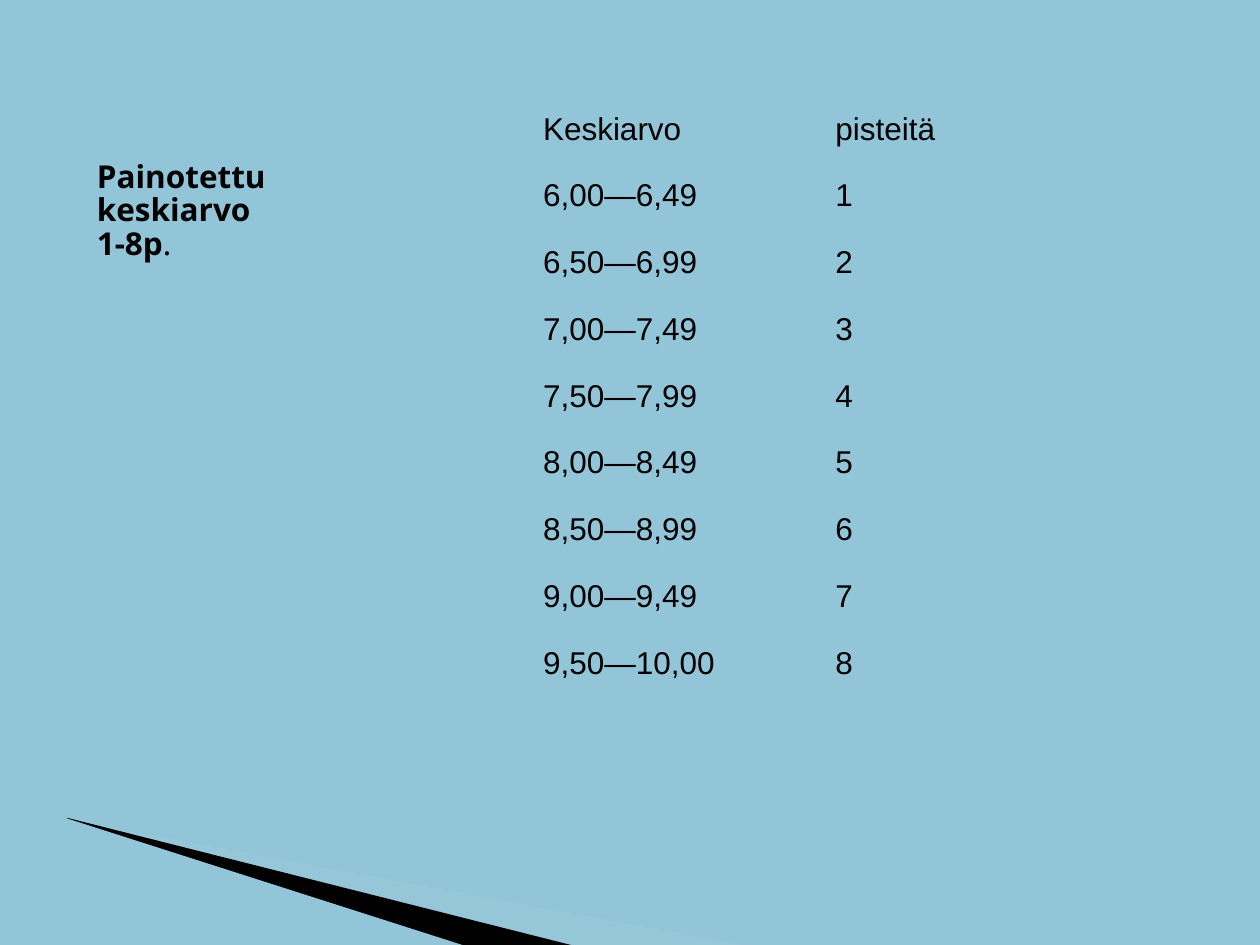
import pptx
import pptx.util
import pptx.dml.color
import pptx.enum.shapes
import pptx.enum.text
import pptx.oxml.ns
from lxml import etree

Inches = pptx.util.Inches
Pt = pptx.util.Pt
qn = pptx.oxml.ns.qn

THEME = {
    "back": "93C5D8", "pale": "9CCADC", "ink": "000000",
    "table": "Arial", "label": "Noto Sans", "size": 18, "lead": 0.89,
    "grid": "{2D5ABB26-0587-4C30-8999-92F81FD0307C}",  # no style, no grid
}


def tint(name):
    return pptx.dml.color.RGBColor.from_string(THEME[name])


class Deck:
    def __init__(self, wide, high):
        self.file = pptx.Presentation()
        self.file.slide_width = Inches(wide)
        self.file.slide_height = Inches(high)
        self.slide = self.file.slides.add_slide(self.file.slide_layouts[6])
        fill = self.slide.background.fill
        fill.solid()
        fill.fore_color.rgb = tint("back")

    def font(self, item, **extra):
        item.font.color.rgb = tint("ink")
        style = {"size": Pt(THEME["size"]), **extra}
        for key, value in style.items():
            setattr(item.font, key, value)

    def wedge(self, points, color, alpha=None):
        start, *rest = [(Inches(x), Inches(y)) for x, y in points]
        path = self.slide.shapes.build_freeform(*start)
        path.add_line_segments(rest)
        shape = path.convert_to_shape()
        shape.shadow.inherit = False
        shape.line.fill.background()
        shape.fill.solid()
        shape.fill.fore_color.rgb = tint(color)
        if alpha:
            node = shape.fill._xPr.find(".//" + qn("a:srgbClr"))
            etree.SubElement(node, qn("a:alpha"), val=str(alpha * 1000))

    def line(self, x1, y1, x2, y2, color, width):
        kind = pptx.enum.shapes.MSO_CONNECTOR.STRAIGHT
        line = self.slide.shapes.add_connector(
            kind, Inches(x1), Inches(y1), Inches(x2), Inches(y2))
        line.line.color.rgb = tint(color)
        line.line.width = Pt(width)
        etree.SubElement(line._element.spPr, qn("a:effectLst"))

    def table(self, left, top, wide, high, rows):
        cols = len(rows[0])
        table = self.slide.shapes.add_table(
            len(rows), cols, Inches(left), Inches(top),
            Inches(wide * cols), Inches(high * len(rows))).table
        table.first_row = table.horz_banding = False
        table._tbl.tblPr.find(qn("a:tableStyleId")).text = THEME["grid"]
        for r, row in enumerate(rows):
            for c, text in enumerate(row):
                cell = table.cell(r, c)
                cell.fill.background()
                cell.vertical_anchor = pptx.enum.text.MSO_ANCHOR.MIDDLE
                cell.text = text
                run = cell.text_frame.paragraphs[0].runs[0]
                self.font(run, name=THEME["table"])

    def text(self, left, top, wide, high, paras):
        box = self.slide.shapes.add_textbox(
            Inches(left), Inches(top), Inches(wide), Inches(high))
        frame = box.text_frame
        frame.word_wrap = True
        frame.auto_size = pptx.enum.text.MSO_AUTO_SIZE.SHAPE_TO_FIT_TEXT
        for i, runs in enumerate(paras):
            para = frame.add_paragraph() if i else frame.paragraphs[0]
            para.line_spacing = THEME["lead"]
            for words, bold in runs:
                run = para.add_run()
                run.text = words
                self.font(run, name=THEME["label"], bold=bold)


def main():
    deck = Deck(10, 7.5)

    # Corner decoration
    deck.wedge([(0.55, 6.51), (5.95, 7.51), (4.56, 7.51), (0.55, 6.5)],
               "pale", 40)
    deck.wedge([(0.53, 6.49), (4.57, 7.51), (3.72, 7.52), (0.54, 6.5)], "ink")
    deck.line(-0.01, 6.33, 3.71, 7.52, "back", 0.95)

    # Points by grade average
    spans = ["6,00—6,49", "6,50—6,99", "7,00—7,49", "7,50—7,99",
             "8,00—8,49", "8,50—8,99", "9,00—9,49", "9,50—10,00"]
    rows = [("Keskiarvo", "pisteitä")]
    rows += [(span, str(n)) for n, span in enumerate(spans, 1)]
    deck.table(4.21, 0.76, 2.32, 0.53, rows)

    # Label
    deck.text(0.67, 1.23, 2.68, 0.71, [
        [("Painotettu keskiarvo", True)],
        [("1-8p", True), (".", False)],
    ])

    deck.file.save("out.pptx")


if __name__ == "__main__":
    main()
